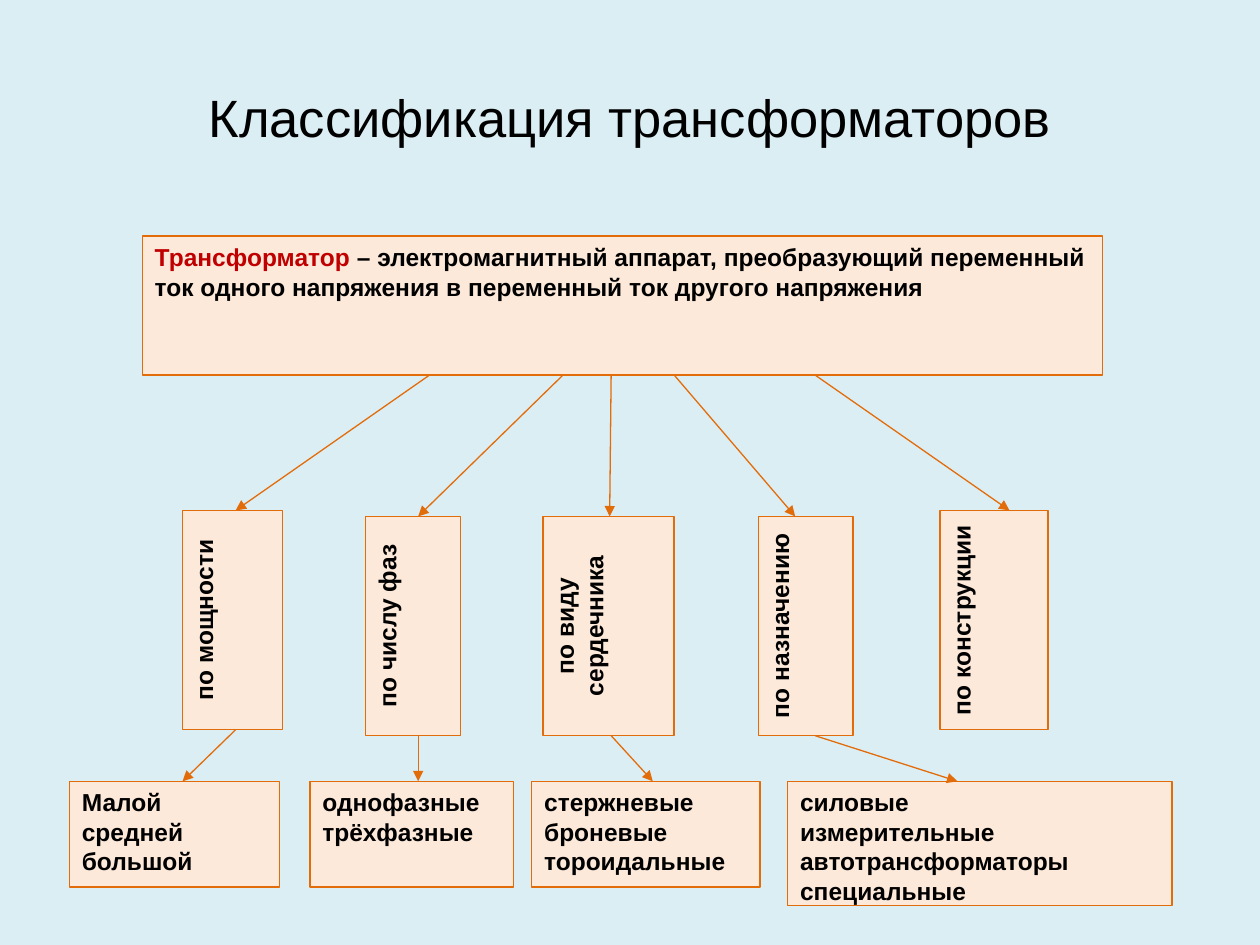
from dataclasses import dataclass

from pptx import Presentation
from pptx.dml.color import RGBColor
from pptx.enum.shapes import MSO_CONNECTOR, MSO_SHAPE
from pptx.enum.text import MSO_ANCHOR, PP_ALIGN
from pptx.oxml.ns import qn
from pptx.oxml.xmlchemy import OxmlElement
from pptx.shapes.autoshape import Shape
from pptx.slide import Slide
from pptx.text.text import Font
from pptx.util import Cm, Pt


@dataclass(frozen=True)
class Theme:
    back: RGBColor = RGBColor(0xDB, 0xEE, 0xF4)
    fill: RGBColor = RGBColor(0xFD, 0xE9, 0xD9)
    edge: RGBColor = RGBColor(0xE3, 0x6C, 0x0A)
    ink: RGBColor = RGBColor(0, 0, 0)
    term: RGBColor = RGBColor(0xC0, 0, 0)
    face: str = "Arial"
    head: float = 30
    body: float = 14
    line: float = 0.75
    gap: float = 10


@dataclass(frozen=True)
class Box:
    left: float
    top: float
    width: float
    height: float
    lines: tuple[str, ...]

    @property
    def base(self) -> float:
        return self.top + self.height


@dataclass(frozen=True)
class Link:
    start: float
    end: float


THEME = Theme()
HIGH, LOW, TALL = 10.29, 10.41, 4.42
ROW, SHORT = 15.75, 2.13

INTRO = Box(2.87, 4.76, 19.35, 2.8, ("Трансформатор",))
REST = " – электромагнитный аппарат, преобразующий переменный ток одного напряжения в переменный ток другого напряжения"
SIGNS = (
    Box(3.68, HIGH, 2.01, TALL, ("по мощности",)),
    Box(7.37, LOW, 1.91, TALL, ("по числу фаз",)),
    Box(10.95, LOW, 2.64, TALL, ("по виду сердечника",)),
    Box(15.29, LOW, 1.91, TALL, ("по назначению",)),
    Box(18.95, HIGH, 2.18, TALL, ("по конструкции",)),
)
KINDS = (
    Box(1.4, ROW, 4.24, SHORT, ("Малой", "средней", "большой")),
    Box(6.25, ROW, 4.11, SHORT, ("однофазные", "трёхфазные")),
    Box(10.72, ROW, 4.6, SHORT, ("стержневые", "броневые", "тороидальные")),
    Box(15.88, ROW, 7.75, 2.51,
        ("силовые", "измерительные", "автотрансформаторы", "специальные")),
)
UPPER = (Link(8.66, 4.75), Link(11.35, 8.43), Link(12.32, 12.29),
         Link(13.59, 16.03), Link(16.43, 20.35))
LOWER = (Link(4.75, 3.68), Link(8.43, 8.43),
         Link(12.32, 13.16), Link(16.43, 19.3))


def style(font: Font, size: float, color: RGBColor, bold: bool) -> None:
    font.name = THEME.face
    font.size = Pt(size)
    font.bold = bold
    font.color.rgb = color


def draw_box(slide: Slide, box: Box) -> Shape:
    shape = slide.shapes.add_shape(
        MSO_SHAPE.RECTANGLE, Cm(box.left), Cm(box.top),
        Cm(box.width), Cm(box.height))
    shape.shadow.inherit = False
    shape.fill.solid()
    shape.fill.fore_color.rgb = THEME.fill
    shape.line.color.rgb = THEME.edge
    shape.line.width = Pt(THEME.line)
    frame = shape.text_frame
    frame.word_wrap = True
    frame.vertical_anchor = MSO_ANCHOR.TOP
    frame.text = "\n".join(box.lines)
    for para in frame.paragraphs:
        para.alignment = PP_ALIGN.LEFT
        for run in para.runs:
            style(run.font, THEME.body, THEME.ink, True)
    return shape


def draw_intro(slide: Slide) -> None:
    para = draw_box(slide, INTRO).text_frame.paragraphs[0]
    para.space_after = Pt(THEME.gap)
    para.runs[0].font.color.rgb = THEME.term
    run = para.add_run()
    run.text = REST
    style(run.font, THEME.body, THEME.ink, True)


def draw_sign(slide: Slide, box: Box) -> None:
    shape = draw_box(slide, box)
    para = shape.text_frame.paragraphs[0]
    para.alignment = PP_ALIGN.CENTER
    para.space_after = Pt(THEME.gap)
    shape.element.find(f".//{qn('a:bodyPr')}").set("vert", "vert270")


def draw_link(slide: Slide, link: Link, top: float, base: float) -> None:
    arrow = slide.shapes.add_connector(
        MSO_CONNECTOR.STRAIGHT, Cm(link.start), Cm(top),
        Cm(link.end), Cm(base))
    arrow.line.color.rgb = THEME.edge
    arrow.line.width = Pt(THEME.line)
    tip = OxmlElement("a:tailEnd")
    tip.set("type", "triangle")
    props = arrow.element.spPr
    props.find(qn("a:ln")).append(tip)
    props.append(OxmlElement("a:effectLst"))


def draw_title(slide: Slide) -> None:
    title = slide.shapes.title
    title.left, title.top = Cm(1.27), Cm(0.76)
    title.width, title.height = Cm(22.86), Cm(3.18)
    frame = title.text_frame
    frame.text = "Классификация трансформаторов"
    frame.vertical_anchor = MSO_ANCHOR.MIDDLE
    para = frame.paragraphs[0]
    para.alignment = PP_ALIGN.CENTER
    style(para.runs[0].font, THEME.head, THEME.ink, False)


def main() -> None:
    deck = Presentation()
    deck.slide_width, deck.slide_height = Cm(25.4), Cm(19.05)
    slide = deck.slides.add_slide(deck.slide_layouts[5])
    slide.background.fill.solid()
    slide.background.fill.fore_color.rgb = THEME.back
    draw_title(slide)
    draw_intro(slide)
    for sign in SIGNS:
        draw_sign(slide, sign)
    for link, sign in zip(UPPER, SIGNS):
        draw_link(slide, link, INTRO.base, sign.top)
    for kind in KINDS:
        draw_box(slide, kind)
    for link, sign, kind in zip(LOWER, SIGNS, KINDS):
        draw_link(slide, link, sign.base, kind.top)
    deck.save("out.pptx")


if __name__ == "__main__":
    main()
